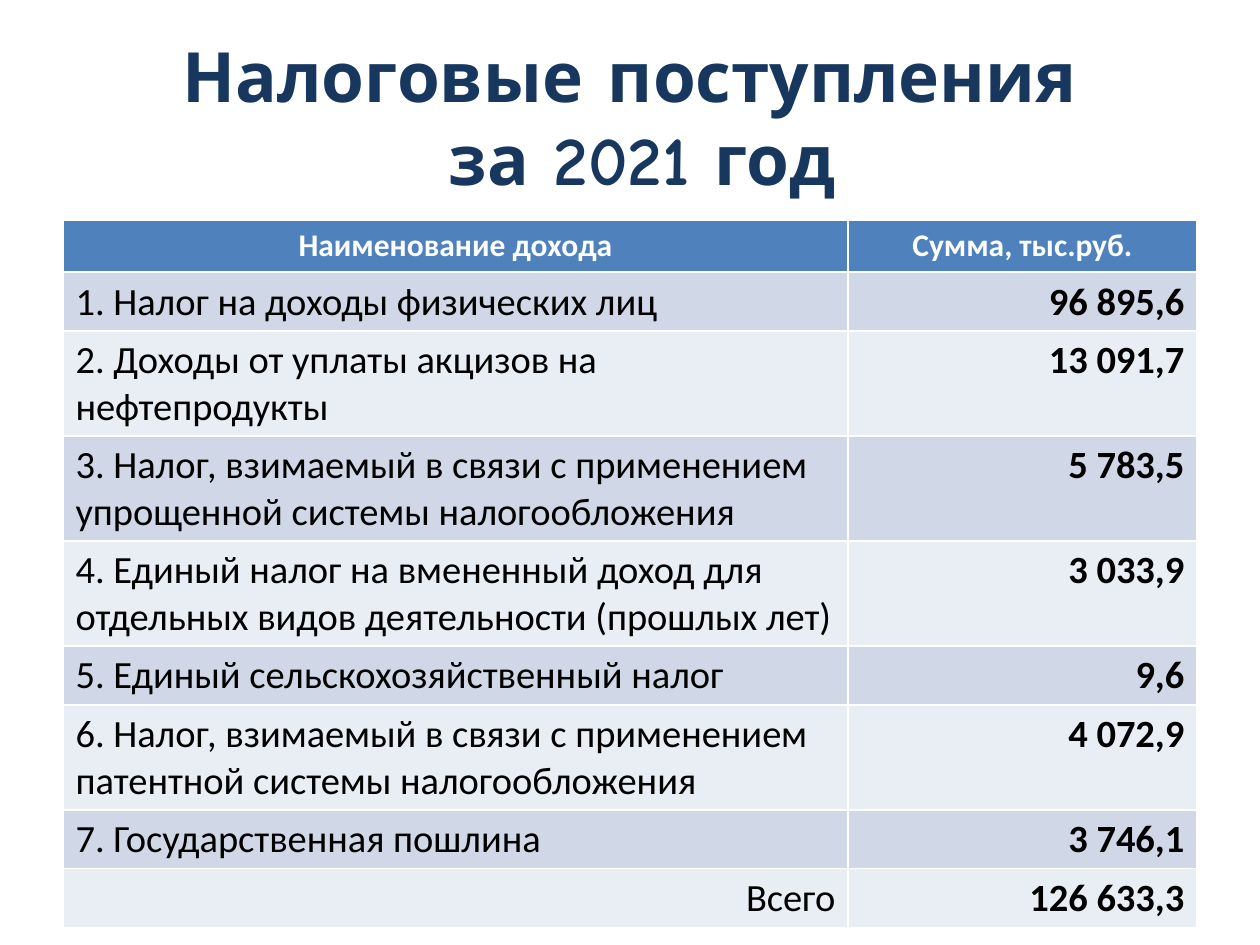
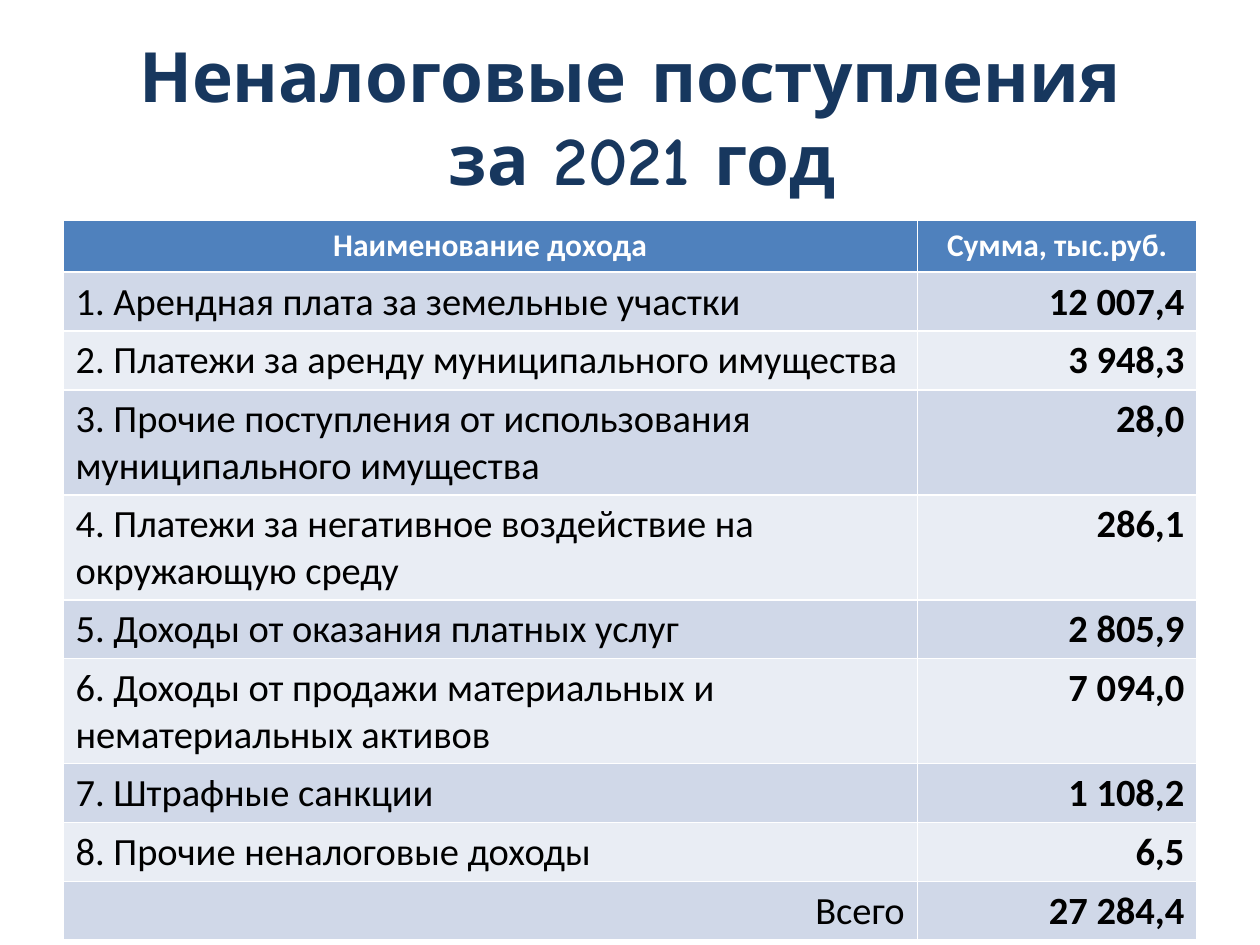
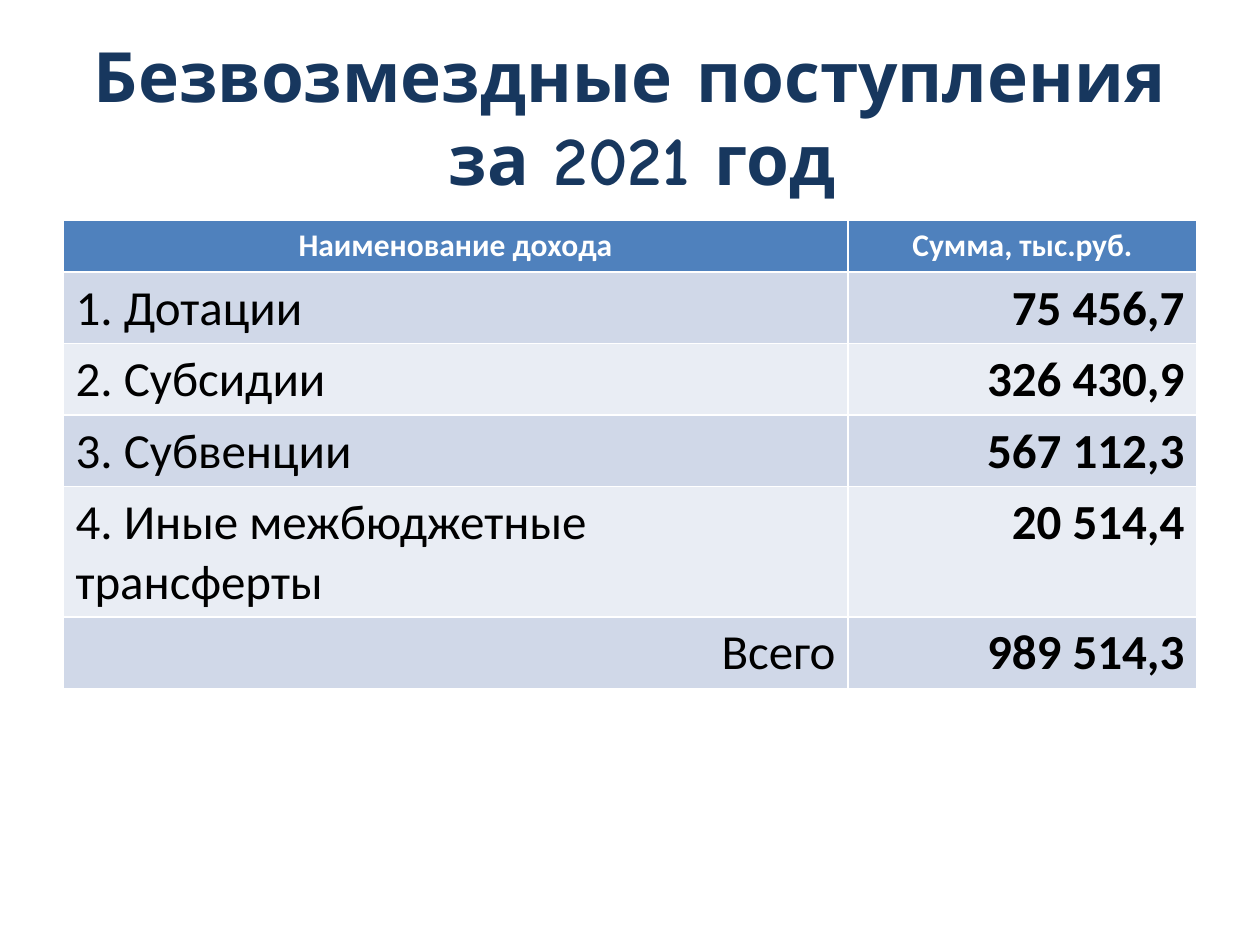
from pptx import Presentation
from pptx.dml.color import RGBColor
from pptx.enum import text
from pptx.util import Inches, Pt

NAVY, BLUE, WHITE, BLACK = "17375E", "4F81BD", "FFFFFF", "000000"
BANDS = ("D0D8E8", "E9EDF4")
LEFT, CENTER, RIGHT = text.PP_ALIGN.LEFT, text.PP_ALIGN.CENTER, text.PP_ALIGN.RIGHT
TABLE_WIDTH, ROW_HEIGHT = 9, 0.41
TOTAL = "Всего"

reports = [
    ("Налоговые", 6.23, 22, [
        ("1. Налог на доходы физических лиц", "96 895,6"),
        ("2. Доходы от уплаты акцизов на нефтепродукты", "13 091,7"),
        ("3. Налог, взимаемый в связи с применением упрощенной системы налогообложения", "5 783,5"),
        ("4. Единый налог на вмененный доход для отдельных видов деятельности (прошлых лет)", "3 033,9"),
        ("5. Единый сельскохозяйственный налог", "9,6"),
        ("6. Налог, взимаемый в связи с применением патентной системы налогообложения", "4 072,9"),
        ("7. Государственная пошлина", "3 746,1"),
        (TOTAL, "126 633,3"),
    ]),
    ("Неналоговые", 6.78, 22, [
        ("1. Арендная плата за земельные участки", "12 007,4"),
        ("2. Платежи за аренду муниципального имущества", "3 948,3"),
        ("3. Прочие поступления от использования муниципального имущества", "28,0"),
        ("4. Платежи за негативное воздействие на окружающую среду", "286,1"),
        ("5. Доходы от оказания платных услуг", "2 805,9"),
        ("6. Доходы от продажи материальных и нематериальных активов", "7 094,0"),
        ("7. Штрафные санкции", "1 108,2"),
        ("8. Прочие неналоговые доходы", "6,5"),
        (TOTAL, "27 284,4"),
    ]),
    ("Безвозмездные", 6.23, 28, [
        ("1. Дотации", "75 456,7"),
        ("2. Субсидии", "326 430,9"),
        ("3. Субвенции", "567 112,3"),
        ("4. Иные межбюджетные трансферты", "20 514,4"),
        (TOTAL, "989 514,3"),
    ]),
]


def rgb(value):
    return RGBColor.from_string(value)


def write(frame, words, size, color=BLACK, bold=False, align=LEFT, font="Calibri"):
    para = frame.paragraphs[0]
    para.text = words
    para.alignment = align
    for span in para.runs:
        span.font.name = font
        span.font.size = Pt(size)
        span.font.bold = bold
        span.font.color.rgb = rgb(color)


deck = Presentation()
deck.slide_width, deck.slide_height = Inches(10), Inches(7.5)

for kind, name_width, size, incomes in reports:
    page = deck.slides.add_slide(deck.slide_layouts[6])

    title = page.shapes.add_textbox(Inches(0.5), Inches(0.3), Inches(9), Inches(1.25)).text_frame
    title.word_wrap = True
    title.vertical_anchor = text.MSO_ANCHOR.MIDDLE
    write(title, f"{kind} поступления\v за 2021 год", size=39.6, color=NAVY,
          bold=True, align=CENTER, font="Comic Neue")

    row_count = len(incomes) + 1
    table = page.shapes.add_table(row_count, 2, Inches(0.5), Inches(1.75), Inches(TABLE_WIDTH),
                                  Inches(ROW_HEIGHT * row_count)).table
    table.columns[0].width = Inches(name_width)
    table.columns[1].width = Inches(TABLE_WIDTH - name_width)
    for row in table.rows:
        row.height = Inches(ROW_HEIGHT)

    for column, heading in enumerate(("Наименование дохода", "Сумма, тыс.руб.")):
        cell = table.cell(0, column)
        cell.fill.solid()
        cell.fill.fore_color.rgb = rgb(BLUE)
        write(cell.text_frame, heading, size=18, color=WHITE, bold=True, align=CENTER)

    for index, (income, amount) in enumerate(incomes):
        name_cell, amount_cell = table.cell(index + 1, 0), table.cell(index + 1, 1)
        for cell in (name_cell, amount_cell):
            cell.fill.solid()
            cell.fill.fore_color.rgb = rgb(BANDS[index % 2])
        write(name_cell.text_frame, income, size=size, align=RIGHT if income == TOTAL else LEFT)
        write(amount_cell.text_frame, amount, size=size, bold=True, align=RIGHT)

deck.save("out.pptx")
